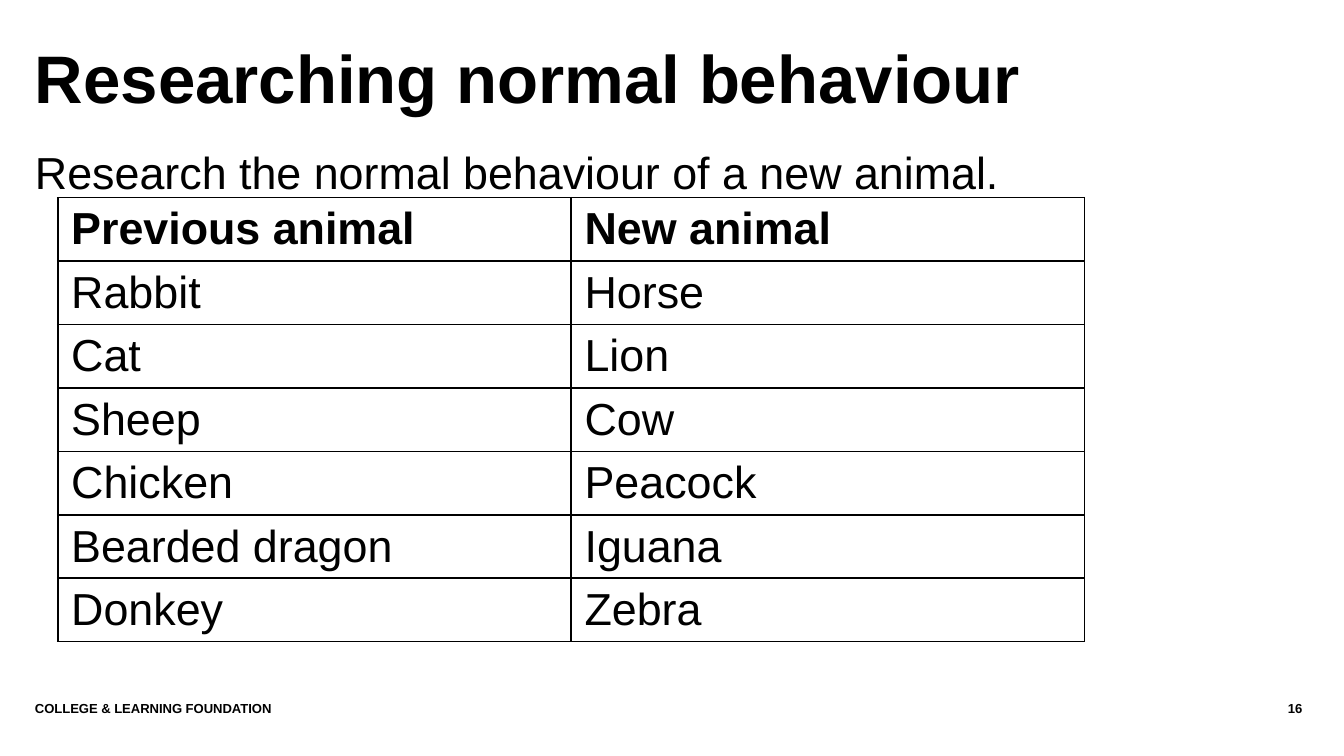
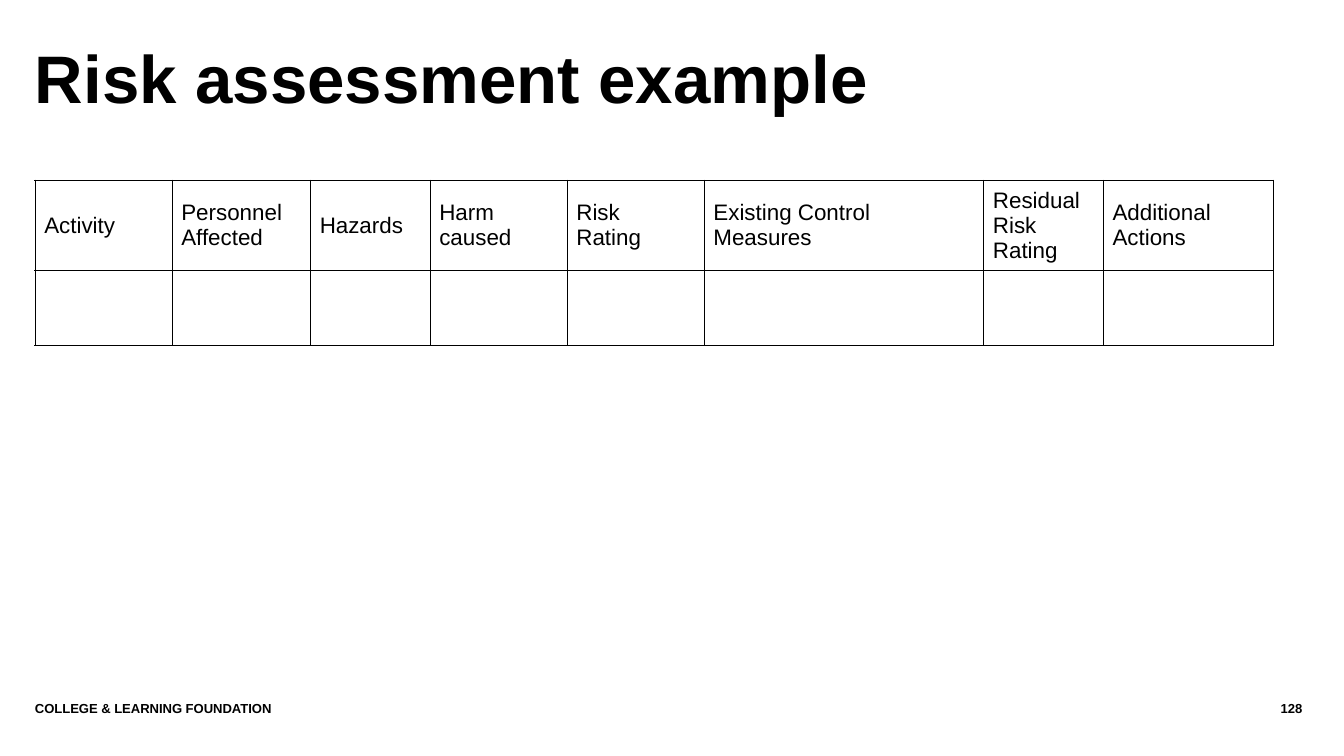
import pptx
import pptx.util
import pptx.dml.color
import pptx.enum.text
import pptx.oxml
from pptx.oxml.ns import qn

Inches, Pt = pptx.util.Inches, pptx.util.Pt
ALIGN = pptx.enum.text.PP_ALIGN
BLACK = pptx.dml.color.RGBColor(0, 0, 0)
WHITE = pptx.dml.color.RGBColor(255, 255, 255)
FONT = "Arial"
FOOTER = "COLLEGE & LEARNING FOUNDATION"


def add_text(s, box, text, size, bold=False, align=ALIGN.LEFT):
    sp = s.shapes.add_textbox(*[Inches(v) for v in box])
    tf = sp.text_frame
    tf.word_wrap = True
    tf.margin_left = tf.margin_right = tf.margin_top = tf.margin_bottom = 0
    tf.text = text
    p = tf.paragraphs[0]
    p.alignment = align
    p.font.name, p.font.size, p.font.bold = FONT, Pt(size), bold
    p.font.color.rgb = BLACK


def add_grid(s, left, top, widths, row_height, rows, size, border, inset, bold_header, fill):
    """Add a table with black borders of one width around every cell."""
    frame = s.shapes.add_table(len(rows), len(widths), Inches(left), Inches(top),
                               Inches(sum(widths)), Inches(row_height * len(rows)))
    table = frame.table
    table.horz_banding = table.first_row = False
    for column, width in zip(table.columns, widths):
        column.width = Inches(width)
    for i, texts in enumerate(rows):
        table.rows[i].height = Inches(row_height)
        for j, text in enumerate(texts):
            cell = table.cell(i, j)
            cell.text = text
            cell.margin_left = cell.margin_right = Inches(inset)
            cell.margin_top = cell.margin_bottom = Pt(2.6)
            cell.vertical_anchor = pptx.enum.text.MSO_ANCHOR.MIDDLE
            for p in cell.text_frame.paragraphs:
                p.font.name, p.font.size = FONT, Pt(size)
                p.font.bold = bold_header and i == 0
                p.font.color.rgb = BLACK
            tc_pr = cell._tc.get_or_add_tcPr()
            for side in ("a:lnL", "a:lnR", "a:lnT", "a:lnB"):
                ln = tc_pr.makeelement(qn(side), {"w": str(Pt(border))})
                color = pptx.oxml.parse_xml(
                    '<a:solidFill xmlns:a="http://schemas.openxmlformats.org/drawingml/2006/main">'
                    f'<a:srgbClr val="{BLACK}"/></a:solidFill>')
                ln.append(color)
                tc_pr.append(ln)
            if fill is None:
                cell.fill.background()
            else:
                cell.fill.solid()
                cell.fill.fore_color.rgb = fill


prs = pptx.Presentation()
prs.slide_width = Inches(10)
prs.slide_height = prs.slide_width * 9 // 16

slides = []
for title, number in [("Researching normal behaviour", "16"),
                      ("Risk assessment example", "128")]:
    s = prs.slides.add_slide(prs.slide_layouts[6])
    add_text(s, (0.26, 0.27, 9.23, 0.76), title, 36, bold=True)
    add_text(s, (0.26, 5.21, 8.41, 0.3), FOOTER, 7, bold=True)
    add_text(s, (8.7, 5.21, 0.99, 0.3), number, 7, bold=True, align=ALIGN.RIGHT)
    slides.append(s)
behaviour, risk = slides

add_text(behaviour, (0.26, 1.08, 8.39, 3.94),
         "Research the normal behaviour of a new animal.", 24)
animals = [
    ("Previous animal", "New animal"),
    ("Rabbit", "Horse"),
    ("Cat", "Lion"),
    ("Sheep", "Cow"),
    ("Chicken", "Peacock"),
    ("Bearded dragon", "Iguana"),
    ("Donkey", "Zebra"),
]
add_grid(behaviour, 0.43, 1.47, [3.82, 3.82], 0.41, animals,
         size=24, border=1, inset=0.1, bold_header=True, fill=WHITE)

headings = ["Activity", "Personnel Affected", "Hazards", "Harm caused", "Risk\nRating",
            "Existing Control Measures", "Residual Risk\nRating", "Additional Actions"]
add_grid(risk, 0.26, 1.34, [1.02, 1.03, 0.89, 1.02, 1.02, 2.08, 0.89, 1.27], 0.56,
         [headings, [""] * len(headings)],
         size=12, border=0.5, inset=0.07, bold_header=False, fill=None)

prs.save("out.pptx")
